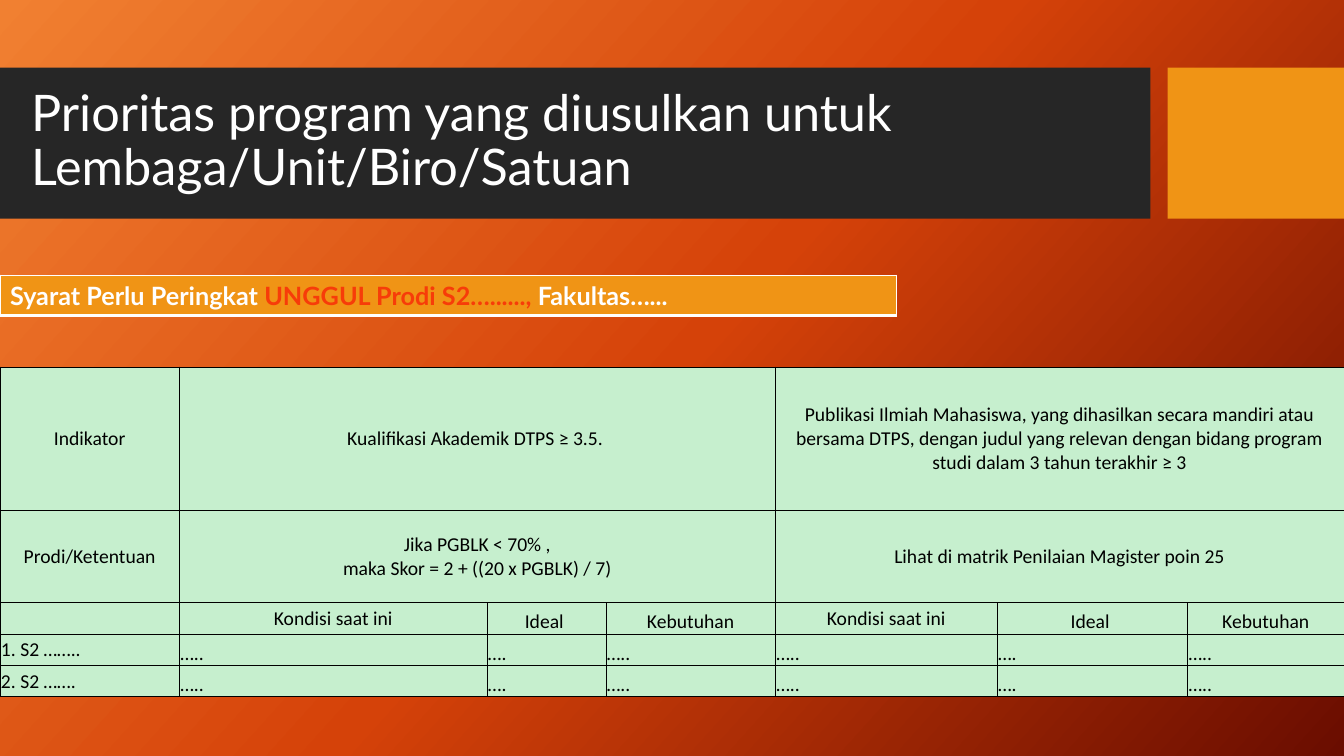
import copy
from dataclasses import dataclass

import pptx
import pptx.util
import pptx.dml.color
import pptx.enum.shapes
import pptx.enum.text
import pptx.oxml
import pptx.oxml.ns
from lxml import etree

Inches = pptx.util.Inches
Anchor = pptx.enum.text.MSO_ANCHOR
Align = pptx.enum.text.PP_ALIGN


@dataclass(frozen=True)
class Theme:
    gradient: tuple = ((0, "F18031"), (0.5, "D54209"), (1, "6A0D00"))
    gradient_angle: int = 42
    title_band: str = "262626"
    accent: str = "F09415"
    highlight: str = "F73C09"
    cell: str = "C6EFCE"
    light: str = "FFFFFF"
    dark: str = "000000"
    heading_font: str = "Lato"
    body_font: str = "Calibri"
    title_size: int = 36
    banner_size: int = 18
    body_size: int = 14


THEME = Theme()


def rgb(value):
    return pptx.dml.color.RGBColor.from_string(value)


def write_text(paragraph, text, *, font, size, color, bold=False, align=None):
    if align is not None:
        paragraph.alignment = align
    for index, line in enumerate(text.split("\n")):
        if index:
            paragraph.add_line_break()
        run = paragraph.add_run()
        run.text = line
        run.font.name = font
        run.font.size = pptx.util.Pt(size)
        run.font.bold = bold
        run.font.color.rgb = rgb(color)


def paint_background(slide):
    fill = slide.background.fill
    fill.gradient()
    fill.gradient_angle = 360 - THEME.gradient_angle
    stop_list = slide.element.find(".//" + pptx.oxml.ns.qn("a:gsLst"))
    stop_list.append(copy.deepcopy(stop_list[-1]))
    for stop, (position, color) in zip(fill.gradient_stops, THEME.gradient):
        stop.position = position
        stop.color.rgb = rgb(color)


def add_block(slide, left, top, width, height, color):
    shape = slide.shapes.add_shape(
        pptx.enum.shapes.MSO_SHAPE.RECTANGLE,
        Inches(left), Inches(top), Inches(width), Inches(height))
    shape.shadow.inherit = False
    shape.fill.solid()
    shape.fill.fore_color.rgb = rgb(color)
    shape.line.fill.background()


def add_title(slide, left, top, width, height, text):
    band_width, accent_width = 11.41, 1.75
    add_block(slide, left, top, band_width, height, THEME.title_band)
    add_block(slide, left + width - accent_width, top, accent_width, height, THEME.accent)
    box = slide.shapes.add_textbox(
        Inches(left + 0.21), Inches(top + 0.15), Inches(10.51), Inches(1.18))
    frame = box.text_frame
    frame.word_wrap = True
    frame.vertical_anchor = Anchor.MIDDLE
    paragraph = frame.paragraphs[0]
    paragraph.line_spacing = 0.9
    write_text(paragraph, text, font=THEME.heading_font,
               size=THEME.title_size, color=THEME.light)


def style_cell(cell, fill, border, widths):
    properties = cell._tc.get_or_add_tcPr()
    for side, width in zip("LRTB", widths):
        line = etree.SubElement(properties, pptx.oxml.ns.qn("a:ln" + side),
                                w=str(pptx.util.Pt(width)))
        solid = etree.SubElement(line, pptx.oxml.ns.qn("a:solidFill"))
        etree.SubElement(solid, pptx.oxml.ns.qn("a:srgbClr"), val=border)
    cell.fill.solid()
    cell.fill.fore_color.rgb = rgb(fill)


def add_plain_table(slide, left, top, columns, rows):
    table = slide.shapes.add_table(
        len(rows), len(columns), Inches(left), Inches(top),
        Inches(sum(columns)), Inches(sum(rows))).table
    table.first_row = False
    table.horz_banding = False
    for column, width in zip(table.columns, columns):
        column.width = Inches(width)
    for row, height in zip(table.rows, rows):
        row.height = Inches(height)
    return table


def add_indicator_table(slide, left, top, width, height):
    columns = [1.78, 3.05, 1.18, 1.68, 2.2, 1.89]
    columns.append(width - sum(columns))
    detail_height = 0.31
    indicator_height = 1.42
    rows = [indicator_height, height - indicator_height - 3 * detail_height]
    rows += [detail_height] * 3
    conditions = ["Kondisi saat ini", "Ideal ", "Kebutuhan"]
    blanks = ["…..", "….", "….."]
    content = [
        ["Indikator", "Kualifikasi Akademik DTPS ≥ 3.5. ", "", "",
         "Publikasi Ilmiah Mahasiswa, yang dihasilkan secara mandiri atau bersama DTPS, "
         "dengan judul yang relevan dengan bidang program studi dalam 3 tahun terakhir ≥ 3",
         "", ""],
        ["Prodi/Ketentuan",
         "Jika PGBLK < 70% ,\nmaka Skor = 2 + ((20 x PGBLK) / 7)", "", "",
         "Lihat di matrik Penilaian Magister poin 25", "", ""],
        [""] + conditions * 2,
        ["1. S2 …….."] + blanks * 2,
        ["2. S2 ……."] + blanks * 2,
    ]
    table = add_plain_table(slide, left, top, columns, rows)
    for row in range(2):
        for first in (1, 4):
            table.cell(row, first).merge(table.cell(row, first + 2))
    for row, texts in enumerate(content):
        for column, text in enumerate(texts):
            cell = table.cell(row, column)
            style_cell(cell, THEME.cell, THEME.dark, [0.5] * 4)
            cell.margin_left = cell.margin_right = cell.margin_top = Inches(0.01)
            cell.margin_bottom = 0
            centred_row = row < 2 or column == 0 or text == conditions[0]
            cell.vertical_anchor = Anchor.MIDDLE if centred_row else Anchor.BOTTOM
            if not cell.is_spanned:
                write_text(cell.text_frame.paragraphs[0], text, font=THEME.body_font,
                           size=THEME.body_size, color=THEME.dark,
                           align=Align.CENTER if row < 3 else Align.LEFT)


def add_banner(slide, left, top, width, height):
    cell = add_plain_table(slide, left, top, [width], [height]).cell(0, 0)
    style_cell(cell, THEME.accent, THEME.light, [1, 1, 1, 3])
    paragraph = cell.text_frame.paragraphs[0]
    for text, color in (
        ("Syarat Perlu Peringkat ", THEME.light),
        ("UNGGUL Prodi S2…......, ", THEME.highlight),
        ("Fakultas…...", THEME.light),
    ):
        write_text(paragraph, text, font=THEME.heading_font,
                   size=THEME.banner_size, color=color, bold=True)


def main():
    presentation = pptx.Presentation()
    presentation.slide_width = Inches(13.33)
    presentation.slide_height = Inches(7.5)
    slide = presentation.slides.add_slide(presentation.slide_layouts[6])
    paint_background(slide)
    add_title(slide, 0, 0.67, 13.33, 1.5,
              "Prioritas program yang diusulkan untuk Lembaga/Unit/Biro/Satuan")
    add_indicator_table(slide, 0, 3.64, 13.33, 3.27)
    add_banner(slide, 0, 2.73, 8.89, 0.4)
    presentation.save("out.pptx")


if __name__ == "__main__":
    main()
